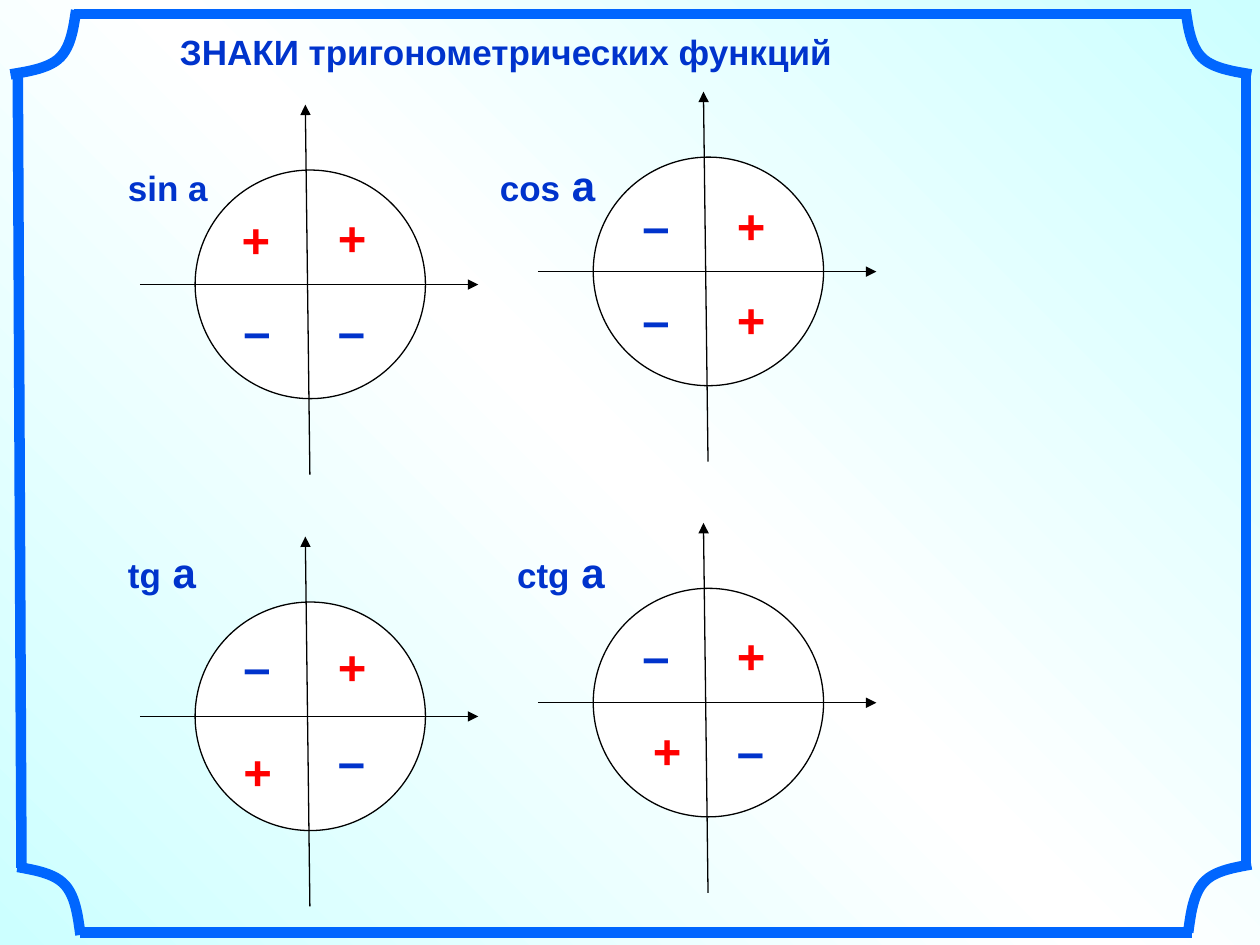
from copy import deepcopy

from pptx import Presentation
from pptx.dml.color import RGBColor
from pptx.enum import shapes, text
from pptx.oxml import ns, xmlchemy
from pptx.util import Pt

FRAME, BLUE, RED, BLACK, WHITE, AQUA = "0066FF", "0033CC", "FF0000", "000000", "FFFFFF", "CCFFFF"


def colour(code):
    return RGBColor.from_string(code)


def add_span(para, words, size=20, code=BLUE, font="Arial", bold=True):
    span = para.add_run()
    span.text = words
    span.font.size, span.font.name, span.font.bold = Pt(size), font, bold
    span.font.color.rgb = colour(code)


class Painter:
    """Holds the line style and the current page."""

    thin, thick = 0.75, 6

    def __init__(self, page):
        self.page = page

    def background(self, edge, middle, angle):
        fill = self.page.background.fill
        fill.gradient()
        fill.gradient_angle = angle
        stops = self.page.background._cSld.find(".//" + ns.qn("a:gsLst"))
        stops.append(deepcopy(stops[0]))
        for stop, position, code in zip(fill.gradient_stops, (0, 0.5, 1), (edge, middle, edge)):
            stop.position = position
            stop.color.rgb = colour(code)

    def line(self, start, end, code=BLACK, width=thin, arrow=False):
        line = self.page.shapes.add_connector(
            shapes.MSO_CONNECTOR.STRAIGHT, *(Pt(v) for v in (*start, *end)))
        line.line.color.rgb = colour(code)
        line.line.width = Pt(width)
        if arrow:
            head = xmlchemy.OxmlElement("a:tailEnd")
            head.set("type", "triangle")
            line.line._get_or_add_ln().append(head)
        line._element.spPr.append(xmlchemy.OxmlElement("a:effectLst"))

    def circle(self, left, top, width, height):
        circle = self.page.shapes.add_shape(
            shapes.MSO_SHAPE.OVAL, Pt(left), Pt(top), Pt(width), Pt(height))
        circle.shadow.inherit = False
        circle.fill.solid()
        circle.fill.fore_color.rgb = colour(WHITE)
        circle.line.color.rgb = colour(BLACK)
        circle.line.width = Pt(self.thin)

    def curve(self, points):
        first, *rest = [(Pt(x), Pt(y)) for x, y in points]
        builder = self.page.shapes.build_freeform(*first)
        builder.add_line_segments(rest, close=False)
        curve = builder.convert_to_shape()
        curve.shadow.inherit = False
        curve.fill.background()
        curve.line.color.rgb = colour(FRAME)
        curve.line.width = Pt(self.thick)

    def text(self, left, top, width, height, *spans, align=None, wrap=True):
        box = self.page.shapes.add_textbox(Pt(left), Pt(top), Pt(width), Pt(height))
        box.text_frame.word_wrap = wrap
        para = box.text_frame.paragraphs[0]
        para.alignment = align
        for words, form in spans:
            add_span(para, words, **form)

    def plot(self, left, top):
        self.circle(left, top, 131.6, 130.6)
        self.line((left - 31.6, top + 65.4), (left + 161.8, top + 65.4), arrow=True)
        self.line((left + 65.6, top + 174), (left + 63, top - 37.4), arrow=True)


def bezier(a, b, c, d, steps=12):
    for i in range(1, steps + 1):
        t = i / steps
        yield tuple((1 - t) ** 3 * p + 3 * (1 - t) ** 2 * t * q + 3 * (1 - t) * t * t * r + t ** 3 * s
                    for p, q, r, s in zip(a, b, c, d))


# Corner from the side (0, 0) to the top or bottom edge (1, 1)
MIDDLE = (0.76, 0.27)
CORNER = [(0, 0), *bezier((0, 0), (0.3, 0.05), (0.6, 0.1), MIDDLE),
          *bezier(MIDDLE, (0.92, 0.44), (0.96, 0.72), (1, 1))]

# Circle corner; name with its place; size of "a"; signs with their places
PLOTS = [
    ((111.5, 97.2), "sin", (66, 91.4), 20,
     [("+", 131, 116), ("+", 186, 115.2), ("–", 132, 168), ("–", 186, 168)]),
    ((339, 89.8), "cos", (278.5, 87.8), 24,
     [("–", 360, 108), ("+", 414, 108), ("–", 360, 162), ("+", 414, 162)]),
    ((111.5, 344), "tg", (66, 309), 24,
     [("–", 132, 360), ("+", 186, 360), ("+", 132, 420), ("–", 186, 414)]),
    ((339, 336.2), "ctg", (288.4, 309), 24,
     [("–", 360, 354), ("+", 414, 354), ("+", 366, 408), ("–", 414, 408)]),
]


def main():
    deck = Presentation()
    deck.slide_width, deck.slide_height = Pt(720), Pt(540)
    painter = Painter(deck.slides.add_slide(deck.slide_layouts[6]))
    painter.background(AQUA, WHITE, 45)

    # Frame sides
    for start, end in [((42.5, 8), (680.5, 8)), ((46, 532.8), (681, 532.8)),
                       ((712, 42.5), (712, 496)), ((10.2, 42.5), (12.3, 496))]:
        painter.line(start, end, FRAME, painter.thick)

    # Frame corners: start on the side, then reach to the edge
    for x, y, width, height in [(6, 42.5, 37.5, -36.7), (715, 42.5, -37.5, -36.7),
                                (10, 495.4, 36, 38.9), (715, 494, -36, 38.9)]:
        painter.curve([(x + width * u, y + height * v) for u, v in CORNER])

    # Title
    painter.text(66, 13.7, 446.4, 32, ("ЗНАКИ тригонометрических функций", {}),
                 align=text.PP_ALIGN.CENTER)

    # Circles with axes, names and signs
    for corner, name, place, size, signs in PLOTS:
        painter.plot(*corner)
        painter.text(*place, 70, 36, (name, {}), (" a", {"size": size}), wrap=False)
        for sign, left, top in signs:
            code = RED if sign == "+" else BLUE
            painter.text(left, top, 30.6, 41, (sign, {"size": 28, "code": code}), wrap=False)

    deck.save("out.pptx")


if __name__ == "__main__":
    main()
